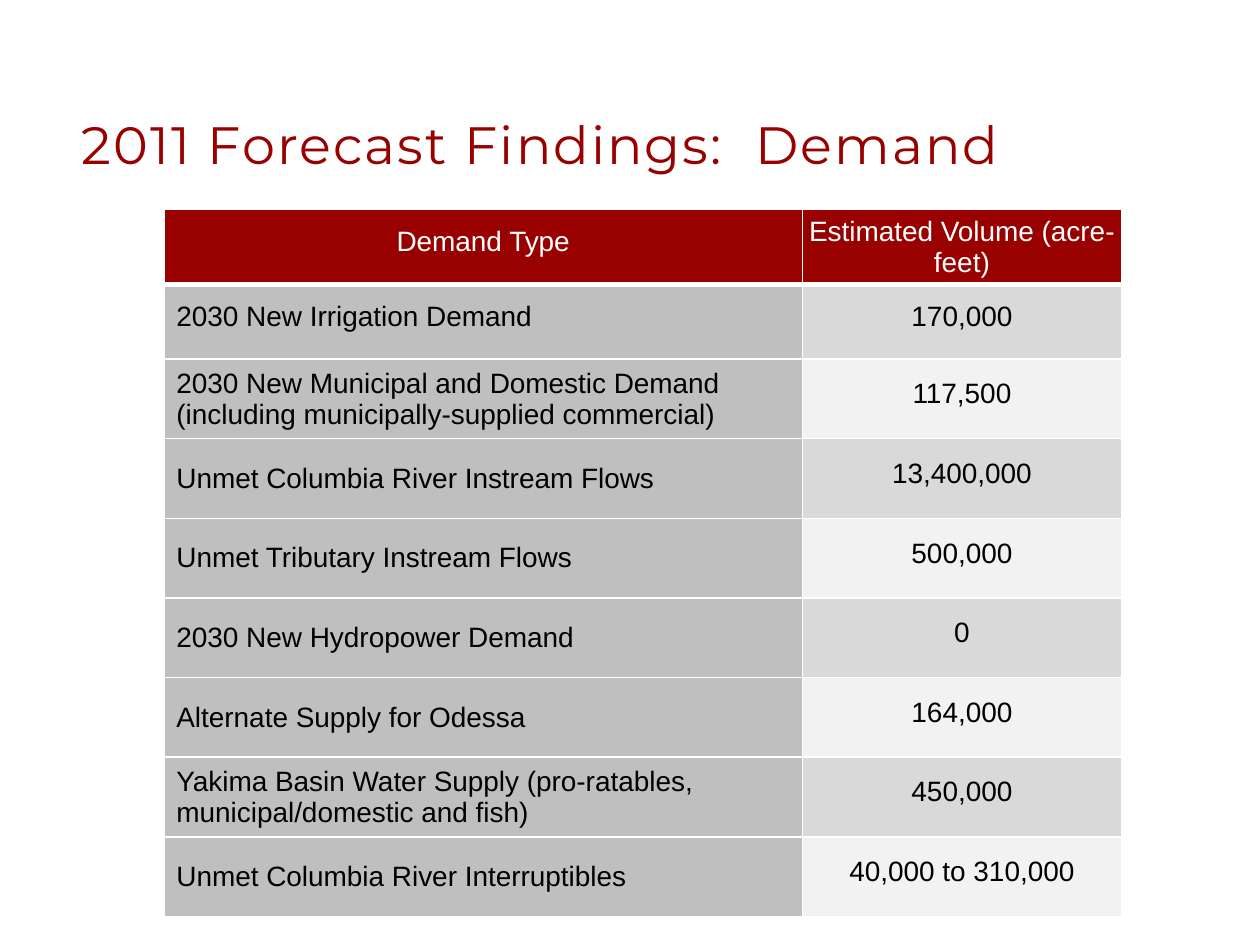
from lxml import etree
from pptx import Presentation
from pptx import util as u
from pptx.dml.color import RGBColor
from pptx.enum import text
from pptx.oxml import ns

Pt = u.Pt
RED = RGBColor(0x99, 0x00, 0x00)
WHITE = RGBColor(0xFF, 0xFF, 0xFF)
BLACK = RGBColor(0x00, 0x00, 0x00)
GREY = RGBColor(0xBF, 0xBF, 0xBF)
BANDS = (RGBColor(0xF2, 0xF2, 0xF2), RGBColor(0xD9, 0xD9, 0xD9))

HEAD = ("Demand Type", "Estimated Volume (acre-feet)")
DEMAND = [
    ("2030 New Irrigation Demand", "170,000"),
    ("2030 New Municipal and Domestic Demand "
     "(including municipally-supplied commercial)", "117,500"),
    ("Unmet Columbia River Instream Flows", "13,400,000"),
    ("Unmet Tributary Instream Flows", "500,000"),
    ("2030 New Hydropower Demand", "0"),
    ("Alternate Supply for Odessa", "164,000"),
    ("Yakima Basin Water Supply (pro-ratables, "
     "municipal/domestic and fish)", "450,000"),
    ("Unmet Columbia River Interruptibles", "40,000 to 310,000"),
]
WIDTHS = (365, 182.2)
HEIGHTS = (43.2, 42.5) + (45.5,) * 7
TIGHT = Pt(12.4)


def assign(item, values):
    for name, value in values.items():
        setattr(item, name, value)


class Deck:
    cell_font = dict(name="Arial", size=Pt(16), bold=False)
    title_font = dict(name="Montserrat", size=Pt(30), bold=False)
    inset = {f"margin_{side}": Pt(2.9)
             for side in ("left", "top", "right", "bottom")}

    def __init__(self):
        self.prs = Presentation()
        assign(self.prs, dict(slide_width=Pt(720), slide_height=Pt(540)))
        self.slide = self.prs.slides.add_slide(self.prs.slide_layouts[6])

    def title(self, words, left, top, width, height):
        box = self.slide.shapes.add_textbox(
            Pt(left), Pt(top), Pt(width), Pt(height))
        frame = box.text_frame
        assign(frame, dict(word_wrap=True,
                           vertical_anchor=text.MSO_ANCHOR.MIDDLE))
        run = frame.paragraphs[0].add_run()
        run.text = words
        assign(run.font, self.title_font)
        run.font.color.rgb = RED
        run.font._element.set("spc", "120")

    def table(self, left, top, widths, heights):
        frame = self.slide.shapes.add_table(
            len(heights), len(widths), Pt(left), Pt(top),
            Pt(sum(widths)), Pt(sum(heights)))
        grid = frame.table
        assign(grid, dict(first_row=False, horz_banding=False))
        for col, width in zip(grid.columns, widths):
            col.width = Pt(width)
        for row, height in zip(grid.rows, heights):
            row.height = Pt(height)
        return grid

    def cell(self, cell, words, fill, color, align, space=None, indent=0,
             base=1):
        assign(cell, self.inset)
        cell.vertical_anchor = text.MSO_ANCHOR.MIDDLE
        cell.fill.solid()
        cell.fill.fore_color.rgb = fill
        self.edges(cell, base)
        para = cell.text_frame.paragraphs[0]
        assign(para, dict(alignment=align, line_spacing=space))
        if indent:
            para._p.get_or_add_pPr().set("marL", str(Pt(indent)))
        run = para.add_run()
        run.text = words
        assign(run.font, self.cell_font)
        run.font.color.rgb = color

    def edges(self, cell, base):
        """Draw white borders; base is the width of the bottom one."""
        props = cell._tc.get_or_add_tcPr()
        sides = dict(lnL=1, lnR=1, lnT=1, lnB=base)
        for spot, (side, width) in enumerate(sides.items()):
            line = etree.Element(ns.qn(f"a:{side}"), w=str(Pt(width)))
            fill = etree.SubElement(line, ns.qn("a:solidFill"))
            etree.SubElement(fill, ns.qn("a:srgbClr"), val=str(WHITE))
            props.insert(spot, line)


def main():
    deck = Deck()
    mid, left = text.PP_ALIGN.CENTER, text.PP_ALIGN.LEFT
    grid = deck.table(93.6, 119.5, WIDTHS, HEIGHTS)
    for col, (words, space) in enumerate(zip(HEAD, (TIGHT, None))):
        deck.cell(grid.cell(0, col), words, RED, WHITE, mid, space, base=3)
    for row, (kind, volume) in enumerate(DEMAND, 1):
        space = TIGHT if row == 1 else None
        deck.cell(grid.cell(row, 0), kind, GREY, BLACK, left, space, 4.3)
        deck.cell(grid.cell(row, 1), volume, BANDS[row % 2], BLACK, mid, TIGHT)
    deck.title("2011 Forecast Findings:  Demand", 39.6, 46, 648, 72)
    deck.prs.save("out.pptx")


if __name__ == "__main__":
    main()
